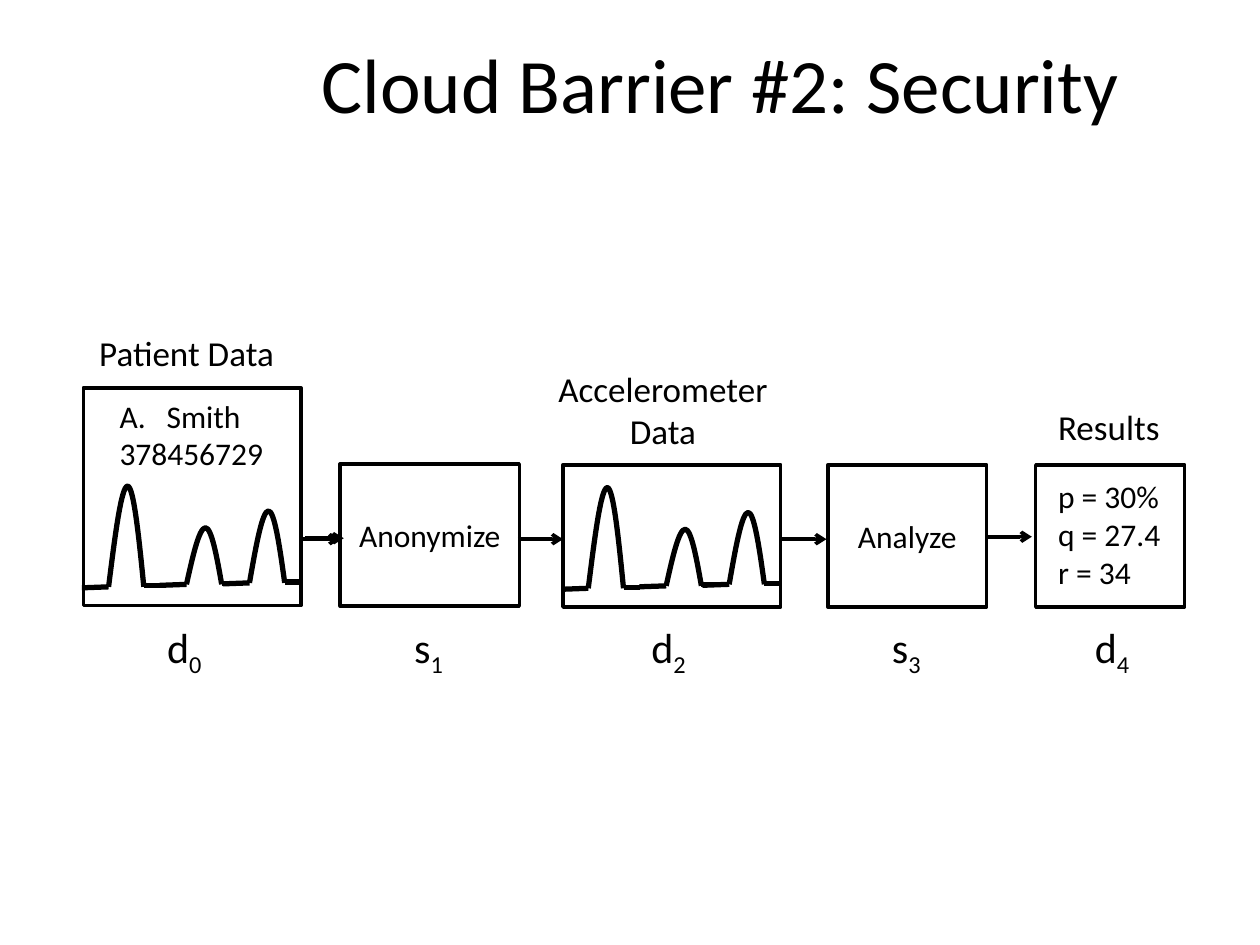
from collections import namedtuple

from lxml.etree import SubElement
from pptx import Presentation
from pptx.dml.color import RGBColor
from pptx.enum.shapes import MSO_CONNECTOR, MSO_SHAPE
from pptx.enum.text import MSO_ANCHOR, MSO_AUTO_SIZE, PP_ALIGN
from pptx.oxml.ns import qn
from pptx.util import Cm, Pt

COLORS = {"ink": "000000", "paper": "FFFFFF"}
FONT = "Calibri"
Box = namedtuple("Box", "left top width height")

PATIENT = Box(1.68, 7.82, 4.39, 4.39)
ANONYMIZE = Box(6.86, 9.35, 3.61, 2.87)
ACCELEROMETER = Box(11.35, 9.37, 4.39, 2.87)
ANALYZE = Box(16.69, 9.37, 3.2, 2.87)
RESULTS = Box(20.88, 9.37, 3, 2.87)

PEAK_WIDTH = 0.71
PEAKS = [(0.51, 0.38, 2.03), (2.08, 0.43, 1.14), (3.35, 0.46, 1.45)]
PEAK_CURVE = [(0, 1), (0.18, 0.5), (0.36, 0), (0.54, 0),
              (0.71, 0), (0.86, 0.5), (1, 1)]
ARROWS = [(6.07, 6.86, 10.87), (10.44, 11.35, 10.87), (6.15, 6.93, 10.85),
          (15.75, 16.66, 10.87), (19.89, 20.8, 10.82)]


def color(name):
    return RGBColor.from_string(COLORS[name])


def add_run(paragraph, text, size):
    run = paragraph.add_run()
    run.text = text
    run.font.name = FONT
    run.font.size = Pt(size)
    run.font.color.rgb = color("ink")
    return run


def add_text(slide, box, lines, size, align=PP_ALIGN.LEFT):
    shape = slide.shapes.add_textbox(*map(Cm, box))
    frame = shape.text_frame
    frame.word_wrap = False
    frame.auto_size = MSO_AUTO_SIZE.SHAPE_TO_FIT_TEXT
    for index, line in enumerate(lines):
        paragraph = frame.add_paragraph() if index else frame.paragraphs[0]
        paragraph.alignment = align
        add_run(paragraph, line, size)
    return frame


def add_line(slide, start, end, width):
    line = slide.shapes.add_connector(
        MSO_CONNECTOR.STRAIGHT, *map(Cm, (*start, *end)))
    line.line.color.rgb = color("ink")
    line.line.width = Pt(width)
    SubElement(line._element.spPr, qn("a:effectLst"))
    return line


def style_outline(shape, width):
    shape.shadow.inherit = False
    shape.fill.solid()
    shape.fill.fore_color.rgb = color("paper")
    shape.line.color.rgb = color("ink")
    shape.line.width = Pt(width)


def add_frame(slide, box):
    shape = slide.shapes.add_shape(MSO_SHAPE.RECTANGLE, *map(Cm, box))
    style_outline(shape, 2)
    return shape


def add_peak(slide, box):
    points = [(Cm(box.left + x * box.width), Cm(box.top + y * box.height))
              for x, y in PEAK_CURVE]
    builder = slide.shapes.build_freeform(*points[0])
    builder.add_line_segments(points[1:], close=False)
    shape = builder.convert_to_shape()
    path = shape._element.find(".//" + qn("a:path"))
    segments = path.findall(qn("a:lnTo"))
    for start in range(0, len(segments), 3):
        curve = SubElement(path, qn("a:cubicBezTo"))
        for segment in segments[start:start + 3]:
            curve.append(segment[0])
            path.remove(segment)
    style_outline(shape, 3)


def add_waveform(slide, box):
    for offset, rise, height in PEAKS:
        left = box.left + offset
        right = left + PEAK_WIDTH
        base = box.top + box.height - rise
        add_peak(slide, Box(left, base - height, PEAK_WIDTH, height))
        add_line(slide, (right, base - 0.02), (right + 0.33, base - 0.02), 3)
        add_line(slide, (left, base), (left - 0.54, base + 0.02), 3)


def add_symbol(slide, left, letter, index):
    frame = add_text(slide, Box(left, 12.4, 1.24, 1.27), [letter], 24)
    run = add_run(frame.paragraphs[0], index, 24)
    run.font._element.set("baseline", "-25000")


def add_title(slide, box):
    frame = slide.shapes.add_textbox(*map(Cm, box)).text_frame
    frame.word_wrap = True
    frame.vertical_anchor = MSO_ANCHOR.MIDDLE
    frame.paragraphs[0].alignment = PP_ALIGN.CENTER
    add_run(frame.paragraphs[0], "Cloud Barrier #2: Security", 44)


def add_patient_data(slide, box):
    add_frame(slide, box)
    add_waveform(slide, box)
    record = Box(box.left + 0.48, box.top + 0.05, 3.43, 1.8)
    frame = add_text(slide, record, ["Smith", "378456729"], 18)
    properties = frame.paragraphs[0]._p.get_or_add_pPr()
    properties.set("marL", str(Cm(0.95)))
    properties.set("indent", str(Cm(-0.95)))
    SubElement(properties, qn("a:buFont"), typeface="+mj-lt")
    SubElement(properties, qn("a:buAutoNum"), type="alphaUcPeriod")
    label = Box(box.left + 0.07, box.top - 1.27, 4.8, 1.12)
    label_frame = add_text(slide, label, ["Patient Data"], 20)
    label_frame.word_wrap = True


def add_accelerometer_data(slide, box):
    add_frame(slide, box)
    add_waveform(slide, box)
    label = Box(box.left - 0.46, box.top - 2.08, 4.95, 1.96)
    add_text(slide, label, ["Accelerometer", "Data"], 20, PP_ALIGN.CENTER)


def add_step(slide, box, name):
    frame = add_frame(slide, box).text_frame
    frame.word_wrap = True
    frame.vertical_anchor = MSO_ANCHOR.MIDDLE
    frame.paragraphs[0].alignment = PP_ALIGN.CENTER
    add_run(frame.paragraphs[0], name, 18)


def add_results(slide, box):
    add_frame(slide, box)
    values = Box(box.left + 0.2, box.top + 0.13, 2.59, 2.57)
    add_text(slide, values, ["p = 30%", "q = 27.4", "r = 34"], 18)
    label = Box(box.left + 0.2, box.top - 1.32, 2.59, 1.12)
    add_text(slide, label, ["Results"], 20)


def add_arrow(slide, left, right, height):
    arrow = add_line(slide, (left, height), (right, height), 2)
    SubElement(arrow.line._get_or_add_ln(), qn("a:tailEnd"), type="arrow")


def main():
    presentation = Presentation()
    presentation.slide_width = Cm(25.4)
    presentation.slide_height = Cm(19.05)
    slide = presentation.slides.add_slide(presentation.slide_layouts[6])
    add_title(slide, Box(4.9, 0.08, 19.25, 3.18))
    add_patient_data(slide, PATIENT)
    add_accelerometer_data(slide, ACCELEROMETER)
    add_step(slide, ANONYMIZE, "Anonymize")
    add_step(slide, ANALYZE, "Analyze")
    add_results(slide, RESULTS)
    for index, left in enumerate([3.12, 8.1, 12.88, 17.73, 21.82]):
        add_symbol(slide, left, "ds"[index % 2], str(index))
    for arrow in ARROWS:
        add_arrow(slide, *arrow)
    presentation.save("out.pptx")


if __name__ == "__main__":
    main()
